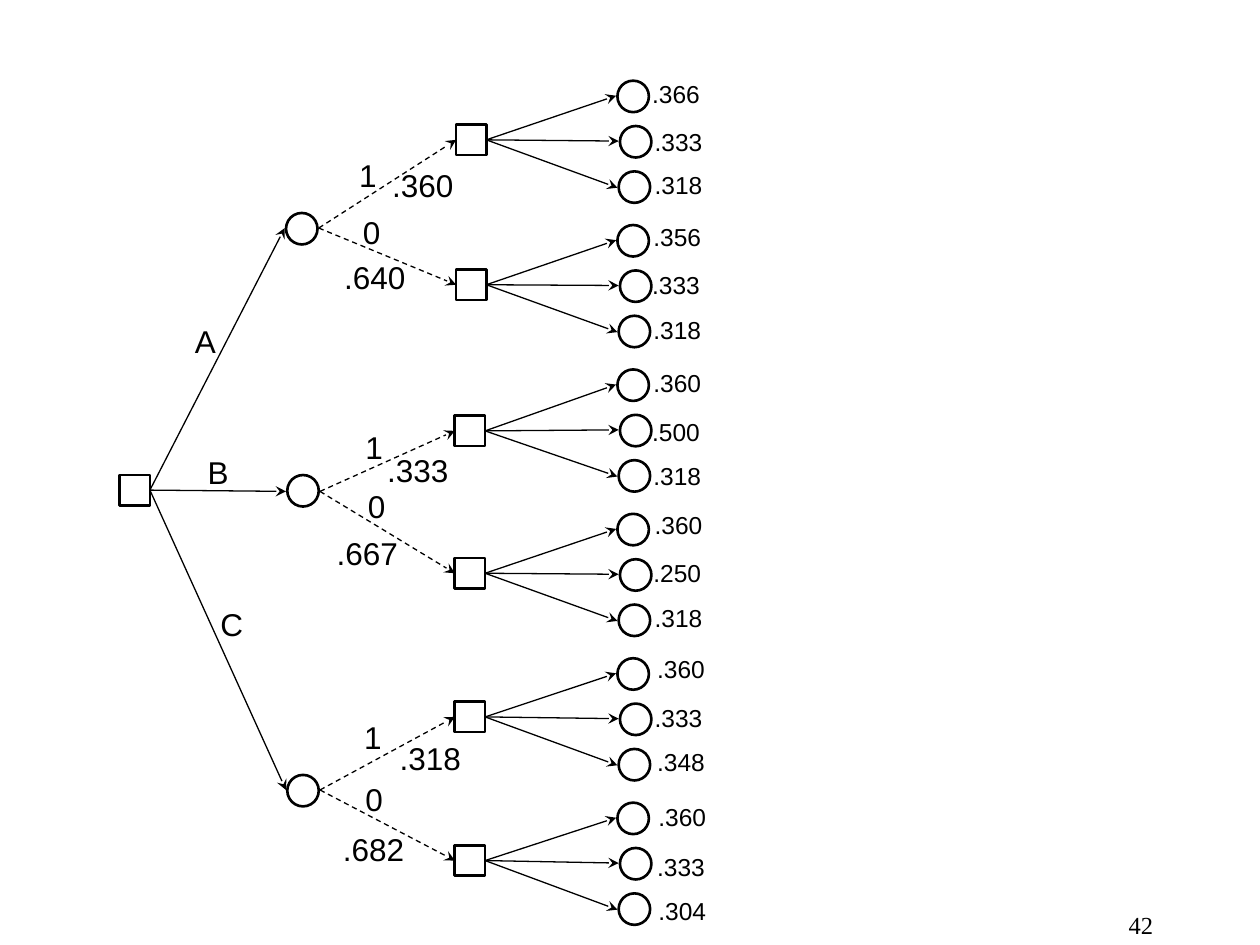
from dataclasses import dataclass
from typing import Optional

import lxml.etree
import pptx
import pptx.dml.color
import pptx.enum.dml
import pptx.enum.shapes
import pptx.enum.text
import pptx.oxml.ns
import pptx.util

Inches = pptx.util.Inches
SHAPES = pptx.enum.shapes.MSO_SHAPE
ALIGN = pptx.enum.text.PP_ALIGN
COLORS = {"ink": "000000"}
SQUARE_SIZE = 0.24
CIRCLE_SIZE = 0.25
LEFT_SIDE, RIGHT_SIDE = 1, 3
FAN_TOP = 1.12
FAN_STEP = 1.146


@dataclass
class Label:
    text: str
    left: float
    top: float
    width: float = 0.71
    height: float = 0.4
    size: int = 18
    font: str = "Arial"
    align: ALIGN = ALIGN.CENTER


@dataclass
class Outcome:
    square_left: float
    square_top: float
    digit: Label
    probability: Label
    payoffs: list[tuple[str, float, float]]


@dataclass
class Action:
    label: Label
    circle_left: float
    circle_top: float
    arrow_end: tuple[float, float]
    outcome_start: tuple[float, float]
    outcomes: list[Outcome]


@dataclass
class Leaf:
    circle_left: float
    circle_offset: float
    arrow_x: float
    arrow_offset: float


LEAVES = [
    Leaf(4.9, -0.48, 4.89, -0.36),
    Leaf(4.92, -0.12, 4.91, 0),
    Leaf(4.91, 0.24, 4.9, 0.37),
]

ACTIONS = [
    Action(Label("A", 1.42, 2.51, 0.42), 2.27, 1.69, (2.26, 1.81), (2.53, 1.81), [
        Outcome(3.62, 0.99, Label("1", 2.71, 1.19, 0.42), Label(".360", 3, 1.27),
                [(".366", 5.01, 0.58), (".333", 5.03, 0.96), (".318", 5.03, 1.3)]),
        Outcome(3.62, 2.14, Label("0", 2.74, 1.64, 0.42), Label(".640", 2.62, 2),
                [(".356", 5.02, 1.71), (".333", 5.01, 2.09), (".318", 5.02, 2.45)]),
    ]),
    Action(Label("B", 1.52, 3.55, 0.42), 2.28, 3.77, (2.27, 3.9), (2.54, 3.9), [
        Outcome(3.61, 3.3, Label("1", 2.76, 3.35, 0.42), Label(".333", 2.96, 3.53),
                [(".360", 5.02, 2.87), (".500", 5.01, 3.26), (".318", 5.02, 3.61)]),
        Outcome(3.61, 4.43, Label("0", 2.78, 3.82, 0.42), Label(".667", 2.51, 4.19, 0.81),
                [(".360", 5.03, 4), (".250", 5.02, 4.38), (".318", 5.03, 4.74)]),
    ]),
    Action(Label("C", 1.63, 4.75, 0.42), 2.28, 6.15, (2.27, 6.27), (2.54, 6.27), [
        Outcome(3.61, 5.57, Label("1", 2.75, 5.65, 0.42), Label(".318", 3.01, 5.82, 0.81),
                [(".360", 5.05, 5.14), (".333", 5.03, 5.53), (".348", 5.05, 5.88)]),
        Outcome(3.61, 6.71, Label("0", 2.76, 6.14, 0.42), Label(".682", 2.56, 6.54, 0.81),
                [(".360", 5.06, 6.32), (".333", 5.05, 6.71), (".304", 5.06, 7.06)]),
    ]),
]


def ink() -> pptx.dml.color.RGBColor:
    return pptx.dml.color.RGBColor.from_string(COLORS["ink"])


def add_node(slide, kind: SHAPES, left: float, top: float, size: float):
    node = slide.shapes.add_shape(kind, Inches(left), Inches(top), Inches(size), Inches(size))
    node.shadow.inherit = False
    node.fill.background()
    node.line.color.rgb = ink()
    node.line.width = pptx.util.Pt(1.5)
    return node


def add_square(slide, left: float, top: float):
    return add_node(slide, SHAPES.RECTANGLE, left, top, SQUARE_SIZE)


def add_circle(slide, left: float, top: float):
    return add_node(slide, SHAPES.OVAL, left, top, CIRCLE_SIZE)


def add_arrow(slide, start: tuple[float, float], end: tuple[float, float],
              source=None, target=None, dashed: bool = False) -> None:
    arrow = slide.shapes.add_connector(
        pptx.enum.shapes.MSO_CONNECTOR.STRAIGHT, *map(Inches, start + end))
    if source is not None:
        arrow.begin_connect(source, RIGHT_SIDE)
    if target is not None:
        arrow.end_connect(target, LEFT_SIDE)
    arrow.line.color.rgb = ink()
    arrow.line.width = pptx.util.Pt(0.75)
    if dashed:
        arrow.line.dash_style = pptx.enum.dml.MSO_LINE.DASH
    qn = pptx.oxml.ns.qn
    properties = arrow.element.spPr
    lxml.etree.SubElement(properties.find(qn("a:ln")), qn("a:tailEnd"), type="stealth")
    lxml.etree.SubElement(properties, qn("a:effectLst"))


def add_label(slide, label: Label) -> None:
    box = slide.shapes.add_textbox(
        *map(Inches, (label.left, label.top, label.width, label.height)))
    box.text_frame.word_wrap = True
    paragraph = box.text_frame.paragraphs[0]
    paragraph.alignment = label.align
    run = paragraph.add_run()
    run.text = label.text
    run.font.name = label.font
    run.font.size = pptx.util.Pt(label.size)
    run.font.color.rgb = ink()


def add_fan(slide, square, center: float, payoffs: list[tuple[str, float, float]]) -> None:
    for leaf, (value, left, top) in zip(LEAVES, payoffs):
        add_arrow(slide, (3.85, center), (leaf.arrow_x, center + leaf.arrow_offset), source=square)
        add_circle(slide, leaf.circle_left, center + leaf.circle_offset)
        add_label(slide, Label(value, left, top, height=0.33, size=14))


def add_outcome(slide, start: tuple[float, float], outcome: Outcome, center: float) -> None:
    square = add_square(slide, outcome.square_left, outcome.square_top)
    middle = (outcome.square_left, outcome.square_top + SQUARE_SIZE / 2)
    add_arrow(slide, start, middle, target=square, dashed=True)
    add_label(slide, outcome.digit)
    add_label(slide, outcome.probability)
    add_fan(slide, square, center, outcome.payoffs)


def main() -> None:
    deck = pptx.Presentation()
    deck.slide_width, deck.slide_height = Inches(10), Inches(7.5)
    slide = deck.slides.add_slide(deck.slide_layouts[6])
    root = add_square(slide, 0.95, 3.77)
    for row, action in enumerate(ACTIONS):
        add_circle(slide, action.circle_left, action.circle_top)
        add_arrow(slide, (1.2, 3.89), action.arrow_end, source=root)
        add_label(slide, action.label)
        for index, outcome in enumerate(action.outcomes, start=2 * row):
            add_outcome(slide, action.outcome_start, outcome, FAN_TOP + index * FAN_STEP)
    add_label(slide, Label("42", 7.17, 7.17, 2.08, 0.5, 14, "Times New Roman", ALIGN.RIGHT))
    deck.save("out.pptx")


if __name__ == "__main__":
    main()
